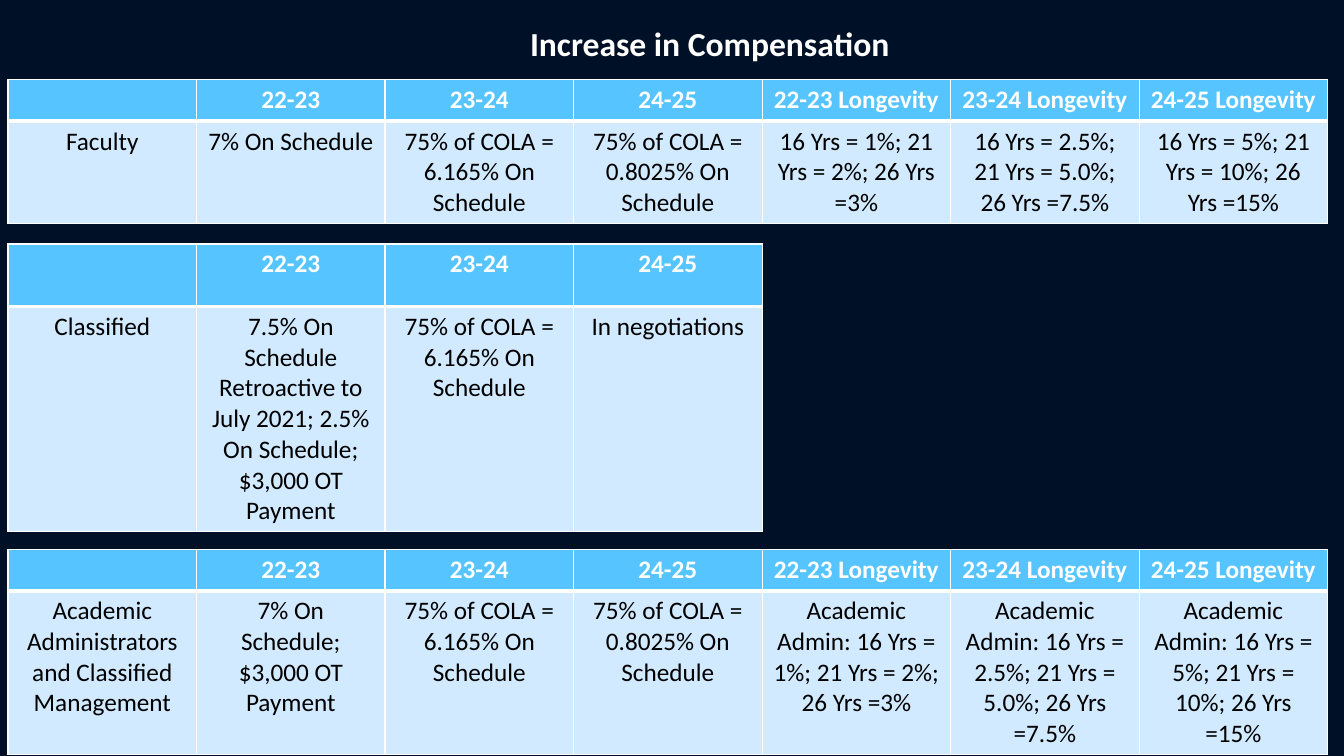
from lxml.etree import SubElement
from pptx import Presentation
from pptx.dml.color import RGBColor
from pptx.enum.text import MSO_AUTO_SIZE, PP_ALIGN
from pptx.oxml.ns import qn
from pptx.util import Inches, Pt

COLORS = {"night": "001027", "header": "56C5FF", "body": "D1EAFF", "white": "FFFFFF", "black": "000000"}
COLUMN_WIDTH = 1.87
YEARS = ["", "22-23", "23-24", "24-25"]
LONGEVITY = ["22-23 Longevity", "23-24 Longevity", "24-25 Longevity"]
COLA_23 = "75% of COLA = 6.165% On Schedule"
COLA_24 = "75% of COLA = 0.8025% On Schedule"
STEPS = [
    "16 Yrs = 1%; 21 Yrs = 2%; 26 Yrs =3%",
    "16 Yrs = 2.5%; 21 Yrs = 5.0%; 26 Yrs =7.5%",
    "16 Yrs = 5%; 21 Yrs = 10%; 26 Yrs =15%",
]
GROUPS = [
    (0.79, 0.41, 1.0, YEARS + LONGEVITY, ["Faculty", "7% On Schedule", COLA_23, COLA_24] + STEPS),
    (2.42, 0.62, 2.21, YEARS, [
        "Classified",
        "7.5% On Schedule Retroactive to July 2021; 2.5% On Schedule; $3,000 OT Payment",
        COLA_23,
        "In negotiations",
    ]),
    (5.45, 0.41, 1.6, YEARS + LONGEVITY, [
        "Academic Administrators and Classified Management",
        "7% On Schedule;\n$3,000 OT Payment",
        COLA_23,
        COLA_24,
    ] + [f"Academic Admin: {step}" for step in STEPS]),
]
ROW_STYLES = [
    {"fill": "header", "text": "white", "bold": True, "borders": {"lnL": 1, "lnR": 1, "lnT": 1, "lnB": 3}},
    {"fill": "body", "text": "black", "bold": False, "borders": {"lnL": 1, "lnR": 1, "lnT": 3, "lnB": 1}},
]


def write_centered(frame, text, size, color, bold):
    frame.text = text
    font_format = {"name": "Calibri", "size": Pt(size), "bold": bold}
    for paragraph in frame.paragraphs:
        paragraph.alignment = PP_ALIGN.CENTER
        for run in paragraph.runs:
            for attribute, value in font_format.items():
                setattr(run.font, attribute, value)
            run.font.color.rgb = RGBColor.from_string(COLORS[color])


def add_borders(cell, widths):
    properties = cell._tc.get_or_add_tcPr()
    for side, width in widths.items():
        line = SubElement(properties, qn(f"a:{side}"), w=str(Pt(width)))
        fill = SubElement(line, qn("a:solidFill"))
        SubElement(fill, qn("a:srgbClr"), val=COLORS["white"])


presentation = Presentation()
presentation.slide_width = Inches(13.33)
presentation.slide_height = Inches(7.5)
slide = presentation.slides.add_slide(presentation.slide_layouts[6])
slide.background.fill.solid()
slide.background.fill.fore_color.rgb = RGBColor.from_string(COLORS["night"])

for top, header_height, body_height, headings, terms in GROUPS:
    compensation = slide.shapes.add_table(
        2, len(headings), Inches(0.08), Inches(top),
        Inches(COLUMN_WIDTH * len(headings)), Inches(header_height + body_height),
    ).table
    for column in compensation.columns:
        column.width = Inches(COLUMN_WIDTH)
    for row, height, texts, style in zip(
        compensation.rows, (header_height, body_height), (headings, terms), ROW_STYLES
    ):
        row.height = Inches(height)
        for cell, text in zip(row.cells, texts):
            add_borders(cell, style["borders"])
            cell.fill.solid()
            cell.fill.fore_color.rgb = RGBColor.from_string(COLORS[style["fill"]])
            write_centered(cell.text_frame, text, 18, style["text"], style["bold"])

heading = slide.shapes.add_textbox(Inches(3.5), Inches(0.18), Inches(7.08), Inches(0.5)).text_frame
heading.word_wrap = True
heading.auto_size = MSO_AUTO_SIZE.SHAPE_TO_FIT_TEXT
write_centered(heading, "Increase in Compensation", 24, "white", True)

presentation.save("out.pptx")
